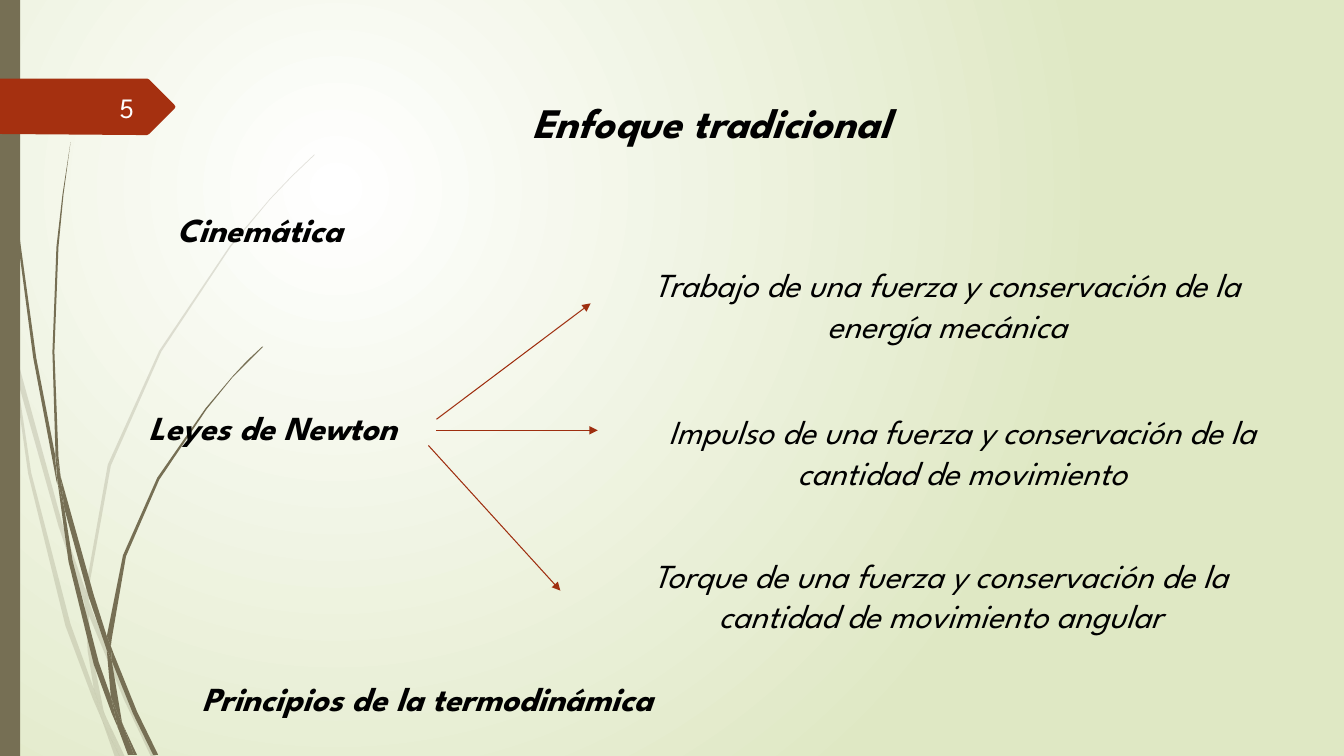
from lxml.etree import SubElement
from pptx import Presentation
from pptx.dml.color import RGBColor
from pptx.enum.shapes import MSO_CONNECTOR as CONN, MSO_SHAPE as SHAPE
from pptx.enum.text import MSO_ANCHOR as ANCHOR, MSO_AUTO_SIZE as AUTO, PP_ALIGN as ALIGN
from pptx.oxml.ns import qn
from pptx.util import Pt

FONT = "League Spartan"
WHITE = RGBColor(0xFF, 0xFF, 0xFF)
NUMBER_WHITE = RGBColor(0xFE, 0xFF, 0xFF)
BLACK = RGBColor(0x00, 0x00, 0x00)
SAGE = RGBColor(0xDF, 0xE8, 0xC4)
OLIVE = RGBColor(0x76, 0x6F, 0x54)
RUST = RGBColor(0xA5, 0x30, 0x10)
ARROW_RUST = RGBColor(0x9E, 0x2E, 0x0F)

# Outlines are drawn on a grid of this step
GRID = Pt(0.72)
PALE_GRASS = [
    [(11, 350), (9, 322), (0, 282), (0, 299), (10, 344)],
    [(58, 522), (84, 599), (85, 586), (62, 520), (14, 345), (17, 376)],
    [(92, 607), (88, 596), (88, 610), (123, 694), (150, 751), (155, 751),
     (127, 692)],
    [(119, 751), (124, 751), (105, 711)],
    [(93, 683), (70, 619), (31, 469), (17, 376), (11, 350), (28, 470),
     (65, 621), (92, 693), (101, 714), (99, 707)],
    [(84, 599), (87, 646), (93, 683), (96, 692), (105, 711), (103, 706),
     (91, 646), (88, 610), (88, 608)],
    [(88, 584), (110, 462), (160, 349), (229, 245), (268, 198), (290, 175),
     (312, 154), (312, 153), (289, 175), (268, 197), (228, 244), (158, 348),
     (107, 461), (85, 584), (85, 586), (88, 596)],
    [(101, 714), (114, 751), (119, 751)],
    [(88, 608), (88, 610), (88, 596), (85, 586), (84, 599)],
    [(96, 692), (93, 683), (99, 707), (101, 714), (119, 751), (105, 711)],
]
DARK_GRASS = [
    [(7, 110), (17, 233), (33, 355), (56, 477), (57, 481), (55, 457),
     (55, 453), (36, 355), (19, 232), (8, 109), (5, 48), (3, 0), (3, 48)],
    [(88, 592), (106, 645), (106, 633), (106, 631), (93, 590), (60, 472),
     (64, 505)],
    [(113, 649), (110, 641), (111, 656), (132, 708), (152, 749), (157, 749),
     (136, 706)],
    [(110, 691), (98, 657), (72, 556), (64, 505), (57, 477), (68, 557),
     (93, 659), (111, 708), (117, 722), (116, 717)],
    [(60, 472), (58, 453), (54, 349), (58, 245), (63, 193), (70, 141),
     (62, 193), (56, 245), (52, 349), (55, 449)],
    [(133, 749), (136, 749), (122, 719)],
    [(57, 477), (64, 505), (60, 472), (55, 449), (55, 453)],
    [(111, 633), (125, 552), (158, 476), (205, 406), (231, 374), (246, 359),
     (261, 344), (260, 344), (245, 358), (231, 373), (204, 405), (156, 474),
     (122, 551), (106, 631), (110, 641)],
    [(117, 722), (127, 749), (131, 749)],
    [(106, 645), (110, 691), (116, 706), (122, 719), (121, 716), (111, 656),
     (109, 651)],
    [(106, 645), (109, 651), (111, 656), (110, 641), (106, 631), (106, 633)],
    [(116, 706), (110, 691), (116, 717), (117, 722), (130, 749), (133, 749),
     (122, 719)],
]
NUMBER_TAG = [(173, 108), (148, 133), (146, 134), (136, 134), (-1, 133),
              (0, 78), (136, 78), (146, 78), (148, 79), (173, 104), (174, 106)]

# Left, top, width, height
TOPICS = [
    ("Leyes de Newton", (49.7, 288, 290.2, 34.6)),
    ("Principios de la termodinámica", (72.7, 481, 465.1, 34.6)),
    ("Cinemática", (40.3, 146.5, 290.2, 34.6)),
]
LAWS = [
    ("Trabajo de una fuerza y conservación de la energía mecánica",
     (443.5, 185.8, 465.8, 63.4)),
    ("Impulso de una fuerza y conservación de la cantidad de movimiento",
     (454.3, 290.9, 465.8, 63.4)),
    ("Torque de una fuerza y conservación de la cantidad de movimiento angular",
     (427, 393.1, 489.6, 63.4)),
]
ARROWS = [
    (311.8, 299.5, 421.9, 216.7),
    (311.8, 307.4, 427, 307.4),
    (306, 318.2, 400.3, 421.9),
]


def paint(sp, color, alpha=None):
    sp.shadow.inherit = False
    sp.fill.solid()
    sp.fill.fore_color.rgb = color
    sp.line.fill.background()
    if alpha is not None:
        clr = sp.element.find(".//" + qn("a:srgbClr"))
        SubElement(clr, qn("a:alpha"), val=str(alpha * 1000))


def add_outline(shapes, points, color, alpha=None):
    builder = shapes.build_freeform(*points[0], scale=GRID)
    builder.add_line_segments(points[1:], close=True)
    paint(builder.convert_to_shape(), color, alpha)


def add_text(shapes, text, box, size=24, color=BLACK, bold=False, italic=True,
             align=ALIGN.CENTER, anchor=ANCHOR.MIDDLE, insets=(5, 3),
             auto_size=AUTO.SHAPE_TO_FIT_TEXT):
    tf = shapes.add_textbox(*map(Pt, box)).text_frame
    tf.word_wrap = True
    tf.auto_size = auto_size
    tf.vertical_anchor = anchor
    tf.margin_left = tf.margin_right = Pt(insets[0])
    tf.margin_top = tf.margin_bottom = Pt(insets[1])
    p = tf.paragraphs[0]
    p.alignment = align
    r = p.add_run()
    r.text = text
    r.font.name, r.font.size, r.font.color.rgb = FONT, Pt(size), color
    r.font.bold, r.font.italic = bold, italic


def add_arrow(shapes, ends):
    cxn = shapes.add_connector(CONN.STRAIGHT, *map(Pt, ends))
    cxn.line.color.rgb = ARROW_RUST
    cxn.line.width = Pt(0.75)
    SubElement(cxn.element.find(".//" + qn("a:ln")), qn("a:tailEnd"),
               type="triangle")
    SubElement(cxn.element.spPr, qn("a:effectLst"))


def set_background(slide):
    fill = slide.background.fill
    fill.gradient()
    for stop, color in zip(fill.gradient_stops, (WHITE, SAGE)):
        stop.color.rgb = color
    grad = slide.element.find(".//" + qn("a:gradFill"))
    grad.remove(grad.find(qn("a:lin")))
    radial = SubElement(grad, qn("a:path"), path="circle")
    SubElement(radial, qn("a:fillToRect"),
               l="50000", t="50000", r="100000", b="100000")


def main():
    prs = Presentation()
    prs.slide_width, prs.slide_height = Pt(960), Pt(540)
    slide = prs.slides.add_slide(prs.slide_layouts[6])
    shapes = slide.shapes

    # Background and grass
    set_background(slide)
    for blade in PALE_GRASS:
        add_outline(shapes, blade, OLIVE, alpha=20)
    for blade in DARK_GRASS:
        add_outline(shapes, blade, OLIVE)

    # Side bar and slide number tag
    bar = shapes.add_shape(SHAPE.RECTANGLE, *map(Pt, (0, 0, 14.4, 540)))
    paint(bar, OLIVE)
    add_outline(shapes, NUMBER_TAG, RUST)
    add_text(shapes, "5", (41.8, 61.9, 61.2, 28.8), size=20, color=NUMBER_WHITE,
             italic=False, align=ALIGN.RIGHT, insets=(7.2, 3.6),
             auto_size=AUTO.NONE)

    # Title, topics and the laws that follow from Newton
    add_text(shapes, "Enfoque tradicional", (195.1, 65.2, 625.7, 43.9), size=30,
             bold=True, anchor=ANCHOR.TOP, insets=(7.2, 3.6))
    for text, box in TOPICS:
        add_text(shapes, text, box, bold=True)
    for text, box in LAWS:
        add_text(shapes, text, box)
    for ends in ARROWS:
        add_arrow(shapes, ends)

    prs.save("out.pptx")


if __name__ == "__main__":
    main()
